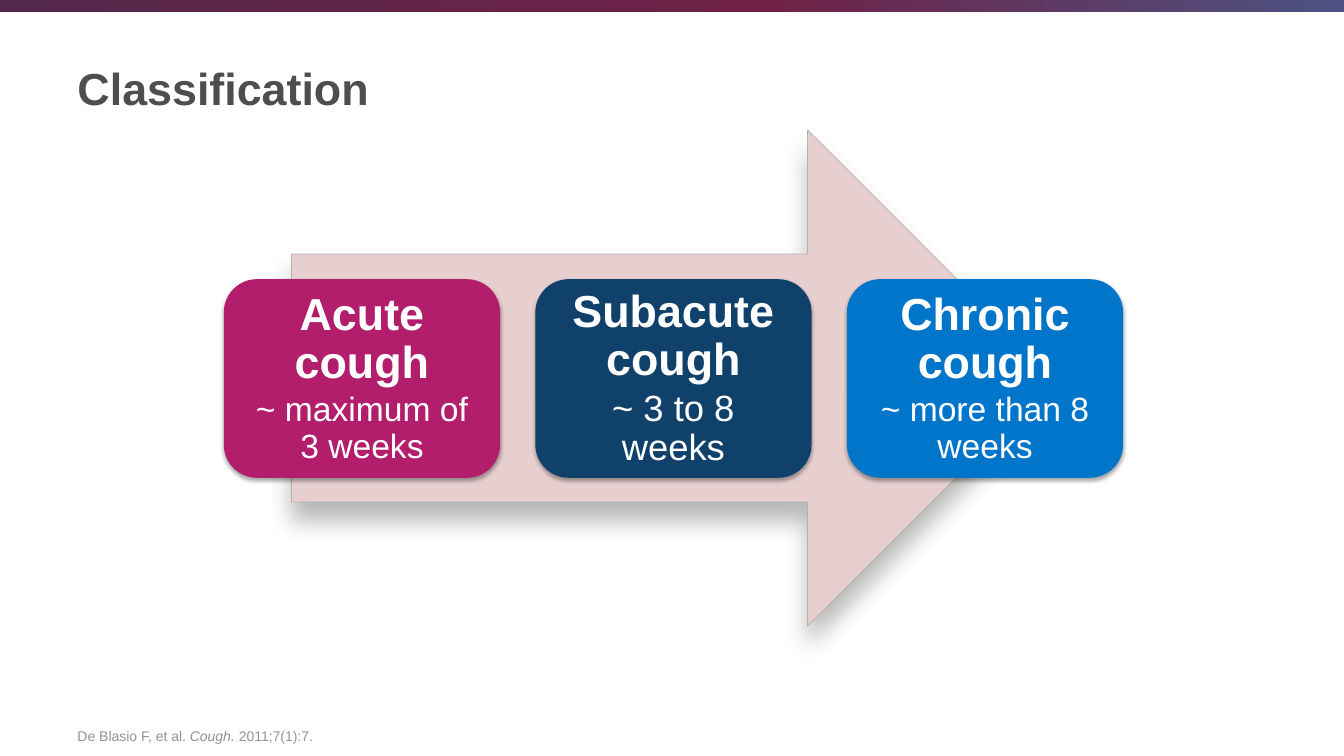
import copy

import pptx
import pptx.dml.color
import pptx.enum.shapes
import pptx.enum.text
import pptx.oxml
import pptx.oxml.ns
import pptx.util
from pptx.util import Inches

COLORS = {
    "title": "4D4E4D", "footnote": "939393", "white": "FFFFFF",
    "arrow": "E8CFCF", "arrow_line": "B2B2B2", "arrow_shadow": "3F3F3F",
    "card_shadow": "000000", "acute": "B21E6C", "subacute": "10416A",
    "chronic": "0075C9", "bar_start": "54284B", "bar_middle": "6F2147",
    "bar_end": "4D5282",
}
SHAPES = pptx.enum.shapes.MSO_SHAPE
ANCHOR = pptx.enum.text.MSO_ANCHOR
ALIGN = pptx.enum.text.PP_ALIGN


def color(name):
    return pptx.dml.color.RGBColor.from_string(COLORS[name])


def add_run(paragraph, text, *, size, tint, font="Arial", bold=False, italic=False):
    run = paragraph.add_run()
    run.text = text
    run.font.name = font
    run.font.size = pptx.util.Pt(size)
    run.font.color.rgb = color(tint)
    run.font.bold = bold
    run.font.italic = italic


class SlideBuilder:
    """Holds the style and the current slide, and draws each kind of element."""

    def __init__(self, slide):
        self.slide = slide

    def shape(self, kind, left, top, width, height, fill=None):
        shape = self.slide.shapes.add_shape(
            kind, Inches(left), Inches(top), Inches(width), Inches(height))
        shape.shadow.inherit = False
        shape.line.fill.background()
        if fill:
            shape.fill.solid()
            shape.fill.fore_color.rgb = color(fill)
        return shape

    def shadow(self, shape, tint, opacity, blur, distance):
        effects = shape._element.spPr.find(pptx.oxml.ns.qn("a:effectLst"))
        effects.append(pptx.oxml.parse_xml(
            f'<a:outerShdw {pptx.oxml.ns.nsdecls("a")} blurRad="{pptx.util.Pt(blur)}" '
            f'dist="{pptx.util.Pt(distance)}" dir="5400000" rotWithShape="0">'
            f'<a:srgbClr val="{COLORS[tint]}"><a:alpha val="{opacity * 1000}"/>'
            '</a:srgbClr></a:outerShdw>'))

    def gradient_bar(self, height, tints, positions):
        bar = self.shape(SHAPES.RECTANGLE, 0, 0, 13.33, height)
        bar.fill.gradient()
        bar.fill.gradient_angle = 0
        stop_list = next(bar._element.spPr.iter(pptx.oxml.ns.qn("a:gsLst")))
        stop_list.append(copy.deepcopy(stop_list[-1]))
        for stop, tint, position in zip(bar.fill.gradient_stops, tints, positions):
            stop.color.rgb = color(tint)
            stop.position = position

    def arrow(self, left, top, width, height):
        arrow = self.shape(SHAPES.RIGHT_ARROW, left, top, width, height, "arrow")
        arrow.line.color.rgb = color("arrow_line")
        arrow.line.width = pptx.util.Pt(0.5)
        self.shadow(arrow, "arrow_shadow", 36, 17, 13)

    def card(self, left, top, fill, heading, duration, duration_size):
        card = self.shape(SHAPES.ROUNDED_RECTANGLE, left, top, 2.74, 1.97, fill)
        card.adjustments[0] = 0.167
        self.shadow(card, "card_shadow", 35, 3, 1.8)
        frame = card.text_frame
        frame.word_wrap = True
        frame.vertical_anchor = ANCHOR.MIDDLE
        frame.margin_left = frame.margin_right = Inches(0.13)
        frame.margin_top = frame.margin_bottom = 0
        add_run(frame.paragraphs[0], heading, size=32, tint="white", bold=True)
        add_run(frame.add_paragraph(), duration, size=duration_size, tint="white")
        for paragraph in frame.paragraphs:
            paragraph.alignment = ALIGN.CENTER
            paragraph.line_spacing = 0.9
            paragraph.space_before = pptx.util.Pt(3)

    def text(self, top, height, anchor, runs, **style):
        box = self.slide.shapes.add_textbox(
            Inches(0.67), Inches(top), Inches(11.75), Inches(height))
        frame = box.text_frame
        frame.word_wrap = True
        frame.vertical_anchor = anchor
        for words, italic in runs:
            add_run(frame.paragraphs[0], words, italic=italic, **style)


def main():
    presentation = pptx.Presentation()
    presentation.slide_width = Inches(13.33)
    presentation.slide_height = Inches(7.5)
    builder = SlideBuilder(presentation.slides.add_slide(presentation.slide_layouts[6]))

    builder.gradient_bar(0.12, ["bar_start", "bar_middle", "bar_end"], [0, 0.57, 1])
    builder.text(0.22, 1.3, ANCHOR.MIDDLE, [("Classification", False)],
                 size=32, tint="title", bold=True)
    builder.arrow(2.89, 1.29, 7.58, 4.92)

    stages = [
        ("acute", "Acute cough", "~ maximum of 3 weeks", 24),
        ("subacute", "Subacute cough", "~ 3 to 8 weeks", 26),
        ("chronic", "Chronic cough", "~ more than 8 weeks", 24),
    ]
    for index, stage in enumerate(stages):
        builder.card(2.22 + 3.09 * index, 2.77, *stage)

    citation = [("De Blasio F, et al. ", False), ("Cough. ", True), ("2011;7(1):7.", False)]
    builder.text(6.95, 0.48, ANCHOR.BOTTOM, citation, size=10, tint="footnote")
    presentation.save("out.pptx")


if __name__ == "__main__":
    main()
